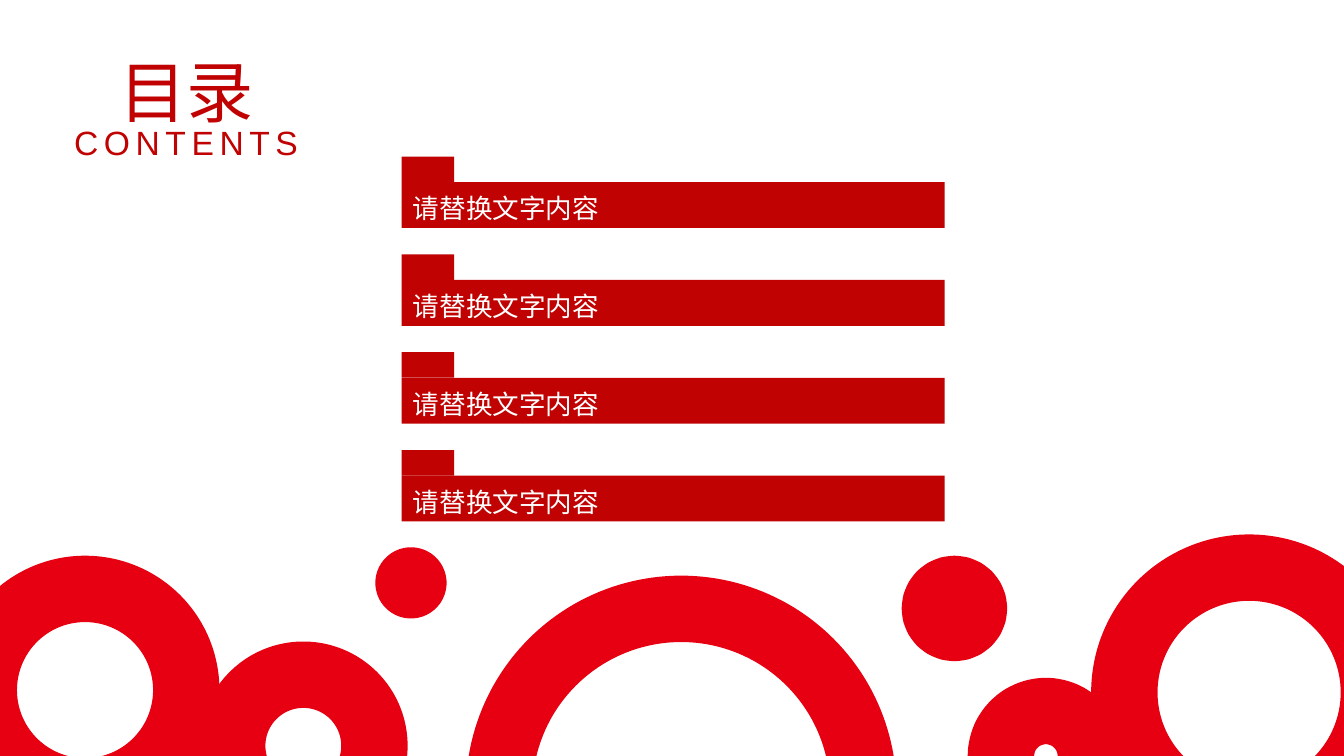
from dataclasses import dataclass

from pptx import Presentation
from pptx.dml.color import RGBColor
from pptx.enum.shapes import MSO_SHAPE
from pptx.enum.text import MSO_ANCHOR, PP_ALIGN
from pptx.shapes.autoshape import Shape
from pptx.slide import Slide
from pptx.text.text import TextFrame
from pptx.util import Cm, Pt

COLORS = {"bar": "C00202", "ring": "E60012", "label": "FFFFFF"}
FONT = "Arial"

ENTRIES = ["请替换文字内容"] * 4
ENTRY_LEFT, FIRST_TAB_TOP, ENTRY_STEP = 10.67, 4.16, 2.6
TAB_WIDTH, TAB_HEIGHT = 1.4, 0.68
BAR_WIDTH, BAR_HEIGHT = 14.43, 1.22


@dataclass
class Ring:
    """Circle outline, in centimetres, with its line width in points."""
    center_x: float
    center_y: float
    diameter: float
    line_width: float = 50


@dataclass
class Heading:
    text: str
    left: float
    top: float
    width: float
    height: float
    size: float
    spacing: float = 0


RINGS = [
    Ring(2.26, 18.34, 5.38),
    Ring(8.06, 19.82, 3.78),
    Ring(10.92, 15.49, 0.91, 28),
    Ring(18.1, 21.02, 9.68),
    Ring(25.36, 16.17, 1.04),
    Ring(33.19, 18.4, 6.63),
    Ring(27.79, 20.09, 2.39),
]

HEADINGS = [
    Heading("目录", 1.85, 1.45, 6.2, 1.9, 50.6),
    Heading("CONTENTS", 1.12, 3.1, 7.65, 1.35, 25.3, 4.2),
]


def color(name: str) -> RGBColor:
    return RGBColor.from_string(COLORS[name])


def draw_ring(slide: Slide, ring: Ring) -> None:
    radius = ring.diameter / 2
    circle = slide.shapes.add_shape(
        MSO_SHAPE.OVAL, Cm(ring.center_x - radius), Cm(ring.center_y - radius),
        Cm(ring.diameter), Cm(ring.diameter))
    circle.shadow.inherit = False
    circle.fill.background()
    circle.line.color.rgb = color("ring")
    circle.line.width = Pt(ring.line_width)


def draw_block(slide: Slide, top: float, width: float, height: float) -> Shape:
    block = slide.shapes.add_shape(
        MSO_SHAPE.RECTANGLE, Cm(ENTRY_LEFT), Cm(top), Cm(width), Cm(height))
    block.shadow.inherit = False
    block.fill.solid()
    block.fill.fore_color.rgb = color("bar")
    block.line.fill.background()
    return block


def write(frame: TextFrame, text: str, size: float, color_name: str,
          align: PP_ALIGN, left_margin: float = 0) -> None:
    """Put one vertically centred paragraph into the frame."""
    frame.word_wrap = True
    frame.vertical_anchor = MSO_ANCHOR.MIDDLE
    frame.margin_left = Cm(left_margin)
    frame.margin_top = frame.margin_right = frame.margin_bottom = 0
    paragraph = frame.paragraphs[0]
    paragraph.text = text
    paragraph.alignment = align
    paragraph.font.name = FONT
    paragraph.font.size = Pt(size)
    paragraph.font.color.rgb = color(color_name)


def draw_entry(slide: Slide, label: str, tab_top: float) -> None:
    """Draw a contents bar with the small tab above its left end."""
    bar = draw_block(slide, tab_top + TAB_HEIGHT, BAR_WIDTH, BAR_HEIGHT)
    write(bar.text_frame, label, 20, "label", PP_ALIGN.LEFT, 0.3)
    bar.text_frame.paragraphs[0].line_spacing = 1.2
    draw_block(slide, tab_top, TAB_WIDTH, TAB_HEIGHT)


def draw_heading(slide: Slide, heading: Heading) -> None:
    box = slide.shapes.add_textbox(
        Cm(heading.left), Cm(heading.top), Cm(heading.width), Cm(heading.height))
    write(box.text_frame, heading.text, heading.size, "bar", PP_ALIGN.CENTER)
    if heading.spacing:
        run = box.text_frame.paragraphs[0].runs[0]
        run._r.get_or_add_rPr().set("spc", str(round(heading.spacing * 100)))


def main() -> None:
    presentation = Presentation()
    presentation.slide_width = Cm(35.71)
    presentation.slide_height = Cm(20.09)
    slide = presentation.slides.add_slide(presentation.slide_layouts[6])

    for ring in RINGS:
        draw_ring(slide, ring)
    for index, label in enumerate(ENTRIES):
        draw_entry(slide, label, FIRST_TAB_TOP + index * ENTRY_STEP)
    for heading in HEADINGS:
        draw_heading(slide, heading)

    presentation.save("out.pptx")


if __name__ == "__main__":
    main()
